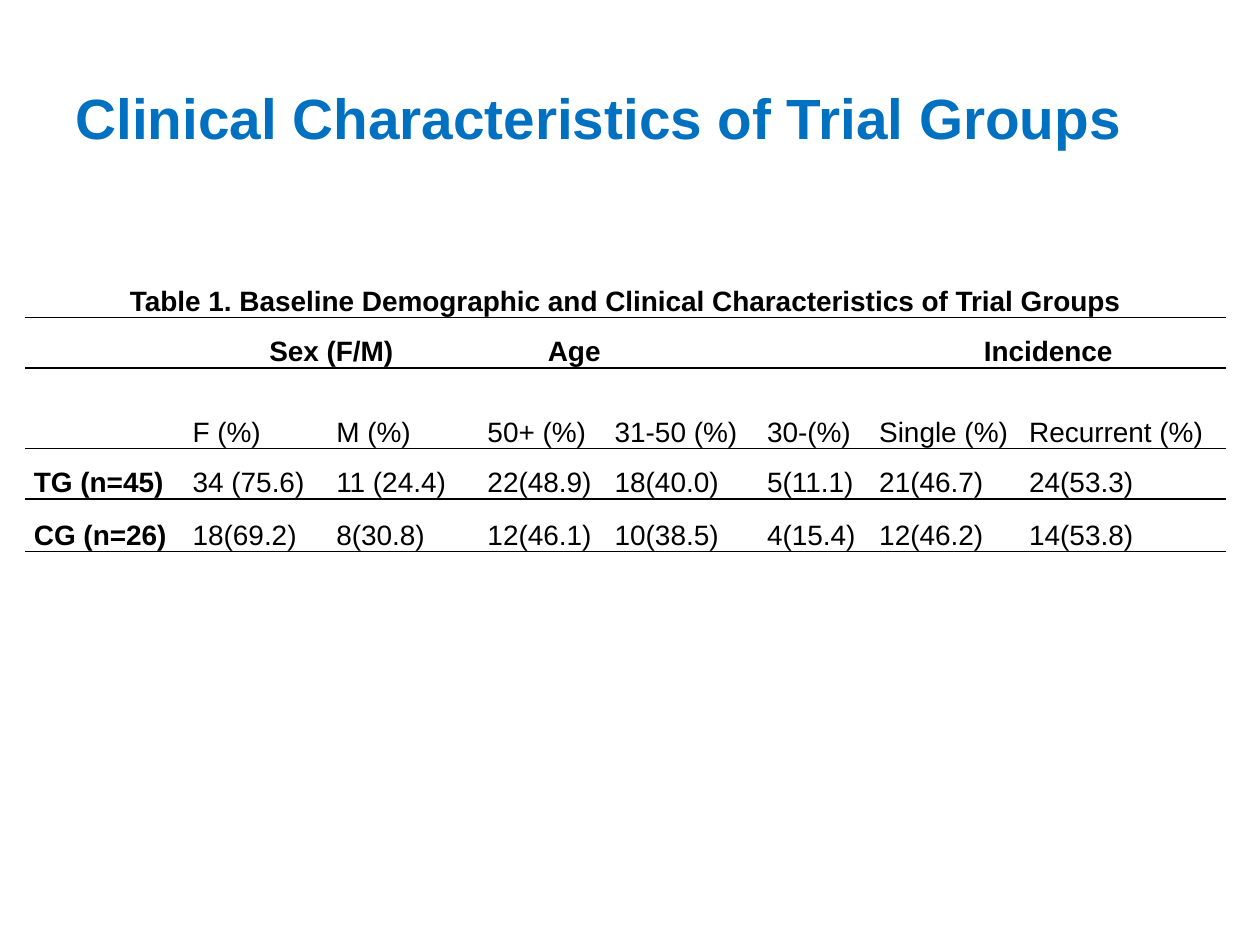
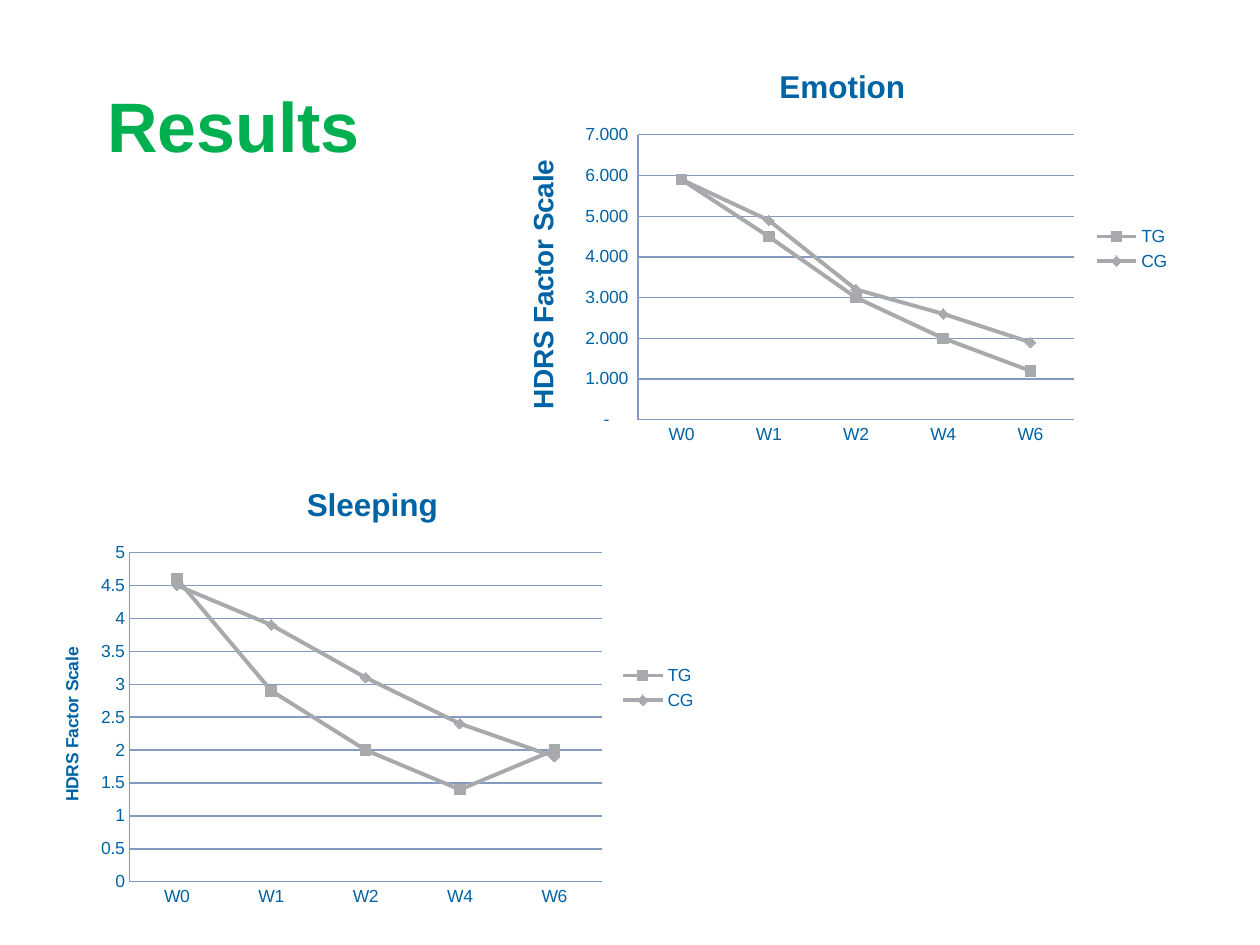
from dataclasses import dataclass

from lxml import etree
from pptx import Presentation
from pptx.chart.data import CategoryChartData
from pptx.dml.color import RGBColor
from pptx.enum.chart import XL_CHART_TYPE, XL_LEGEND_POSITION, XL_MARKER_STYLE, XL_TICK_MARK
from pptx.enum.text import MSO_ANCHOR, MSO_AUTO_SIZE, PP_ALIGN
from pptx.oxml import parse_xml
from pptx.oxml.ns import nsdecls, qn
from pptx.util import Pt

LINE_MARKERS = XL_CHART_TYPE.LINE_MARKERS
LEGEND_RIGHT = XL_LEGEND_POSITION.RIGHT
MARKERS = (XL_MARKER_STYLE.SQUARE, XL_MARKER_STYLE.DIAMOND)
NO_TICK = XL_TICK_MARK.NONE
MIDDLE = MSO_ANCHOR.MIDDLE
BOTTOM = MSO_ANCHOR.BOTTOM
LEFT = PP_ALIGN.LEFT
CENTER = PP_ALIGN.CENTER
NO_AUTOFIT = MSO_AUTO_SIZE.NONE
TITLE_ONLY = 5
PLAIN_TABLE = "{2D5ABB26-0587-4C30-8999-92F81FD0307C}"


@dataclass(frozen=True)
class Theme:
    font: str = "Arial"
    blue: RGBColor = RGBColor(0x00, 0x70, 0xC0)
    green: RGBColor = RGBColor(0x00, 0xB0, 0x50)
    black: RGBColor = RGBColor(0x00, 0x00, 0x00)
    chart_text: RGBColor = RGBColor(0x00, 0x63, 0xA4)
    grid: RGBColor = RGBColor(0x85, 0x9A, 0xC0)
    series: RGBColor = RGBColor(0xA7, 0xA9, 0xAC)
    title_size: float = 32.4
    results_size: float = 40
    table_size: float = 16
    chart_title_size: float = 18
    chart_size: float = 10


class Builder:
    def __init__(self, deck, theme):
        self.deck = deck
        self.theme = theme
        self.page = None

    def add_page(self):
        self.page = self.deck.slides.add_slide(self.deck.slide_layouts[TITLE_ONLY])

    def style(self, font, size, color, bold=False):
        font.name = self.theme.font
        font.size = Pt(size)
        font.color.rgb = color
        font.bold = bold

    def set_text(self, frame, text, size, color, bold=False, align=LEFT):
        frame.text = text
        para = frame.paragraphs[0]
        para.alignment = align
        for span in para.runs:
            self.style(span.font, size, color, bold)

    def title(self, text, bounds, size, color):
        box = self.page.shapes.title
        box.left, box.top, box.width, box.height = map(Pt, bounds)
        frame = box.text_frame
        frame.auto_size = NO_AUTOFIT
        frame.word_wrap = True
        frame.vertical_anchor = MIDDLE
        self.set_text(frame, text, size, color, bold=True)

    def table(self, left, top, widths, heights):
        frame = self.page.shapes.add_table(
            len(heights), len(widths), Pt(left), Pt(top), Pt(sum(widths)), Pt(sum(heights)))
        table = frame.table
        table.first_row = table.horz_banding = False
        next(table._tbl.iter(qn("a:tableStyleId"))).text = PLAIN_TABLE
        for column, width in zip(table.columns, widths):
            column.width = Pt(width)
        for row, height in zip(table.rows, heights):
            row.height = Pt(height)
        for cell in table.iter_cells():
            cell.margin_left = cell.margin_right = Pt(5)
            cell.margin_top = cell.margin_bottom = 0
            cell.vertical_anchor = BOTTOM
            cell.fill.background()
        return table

    def cell(self, cell, text, bold=False, align=LEFT):
        self.set_text(cell.text_frame, text, self.theme.table_size, self.theme.black, bold, align)

    def rule(self, table, row, side):
        for column in range(len(table.columns)):
            properties = table.cell(row, column)._tc.get_or_add_tcPr()
            line = parse_xml(f'<a:{side} {nsdecls("a")} w="{Pt(1)}"/>')
            fill = etree.SubElement(line, qn("a:solidFill"))
            etree.SubElement(fill, qn("a:srgbClr"), val=str(self.theme.black))
            properties.insert(0, line)

    def place_plot(self, chart, plot_box):
        area = chart._chartSpace.chart.plotArea
        for old in area.findall(qn("c:layout")):
            area.remove(old)
        layout = etree.Element(qn("c:layout"))
        manual = etree.SubElement(layout, qn("c:manualLayout"))
        settings = [("layoutTarget", "inner"), ("xMode", "edge"), ("yMode", "edge")]
        for name, value in settings + list(zip("xywh", plot_box)):
            etree.SubElement(manual, qn(f"c:{name}"), val=str(value))
        area.insert(0, layout)

    def line_chart(self, name, bounds, categories, values, maximum, step,
                   axis_size, number_format, plot_box):
        theme = self.theme
        data = CategoryChartData()
        data.categories = categories
        for group, scores in values.items():
            data.add_series(group, scores)
        chart = self.page.shapes.add_chart(LINE_MARKERS, *map(Pt, bounds), data).chart
        self.style(chart.font, theme.chart_size, theme.chart_text)
        chart.has_title = True
        self.set_text(chart.chart_title.text_frame, name,
                      theme.chart_title_size, theme.chart_text, True, CENTER)
        chart.chart_title.include_in_layout = False
        chart.has_legend = True
        chart.legend.position = LEGEND_RIGHT
        chart.legend.include_in_layout = False

        scale = chart.value_axis
        scale.minimum_scale, scale.maximum_scale, scale.major_unit = 0, maximum, step
        scale.tick_labels.number_format = number_format
        scale.tick_labels.number_format_is_linked = False
        scale.has_title = True
        self.set_text(scale.axis_title.text_frame, "HDRS Factor Scale",
                      axis_size, theme.chart_text, True, CENTER)
        scale.has_major_gridlines = True
        for axis in (scale, chart.category_axis):
            axis.major_tick_mark = axis.minor_tick_mark = NO_TICK
        for part in (scale, chart.category_axis, scale.major_gridlines):
            part.format.line.color.rgb = theme.grid
            part.format.line.width = Pt(0.75)

        plot = chart.plots[0]
        plot.vary_by_categories = False
        for series, marker in zip(plot.series, MARKERS):
            series.smooth = False
            series.format.line.color.rgb = theme.series
            series.format.line.width = Pt(2.25)
            series.marker.style = marker
            series.marker.size = 6
            series.marker.format.fill.solid()
            series.marker.format.fill.fore_color.rgb = theme.series
            series.marker.format.line.color.rgb = theme.series
        self.place_plot(chart, plot_box)


def build_characteristics(builder):
    theme = builder.theme
    builder.add_page()
    builder.title("Clinical Characteristics of Trial Groups", (36, 21.6, 648, 90),
                  theme.title_size, theme.blue)
    widths = (90.7, 82.1, 86.4, 72.7, 87.1, 64.1, 85.7, 117.4)
    table = builder.table(14.4, 151.2, widths, (30.2, 28.8, 46.1, 28.8, 30.2))
    headings = (
        (0, 0, 7, "Table 1. Baseline Demographic and Clinical Characteristics of Trial Groups", CENTER),
        (1, 1, 2, "Sex (F/M)", CENTER),
        (1, 3, 5, "Age", LEFT),
        (1, 6, 7, "Incidence", CENTER),
    )
    for row, first, last, text, align in headings:
        table.cell(row, first).merge(table.cell(row, last))
        builder.cell(table.cell(row, first), text, True, align)
    table.cell(1, 3).margin_left = Pt(39.5)
    rows = (
        ("", "F (%)", "M (%)", "50+ (%)", "31-50 (%)", "30-(%)", "Single (%)", "Recurrent (%)"),
        ("TG (n=45)", "34 (75.6)", "11 (24.4)", "22(48.9)", "18(40.0)", "5(11.1)", "21(46.7)", "24(53.3)"),
        ("CG (n=26)", "18(69.2)", "8(30.8)", "12(46.1)", "10(38.5)", "4(15.4)", "12(46.2)", "14(53.8)"),
    )
    for row, texts in enumerate(rows, 2):
        for column, text in enumerate(texts):
            builder.cell(table.cell(row, column), text, bold=column == 0)
    for row, side in ((1, "lnT"), (3, "lnT"), (4, "lnB")):
        builder.rule(table, row, side)


def build_results(builder):
    theme = builder.theme
    weeks = ("W0", "W1", "W2", "W4", "W6")
    builder.add_page()
    builder.title("Results", (54, 43.2, 160.6, 55.4), theme.results_size, theme.green)
    builder.line_chart(
        "Emotion", (286.6, 25.9, 389.5, 232.6), weeks,
        {"TG": (5.9, 4.5, 3, 2, 1.2), "CG": (5.9, 4.9, 3.2, 2.6, 1.9)},
        7, 1, 16, r'_-* #,##0.000_-;\-* #,##0.000_-;_-* "-"??_-', (0.2, 0.22, 0.64, 0.7))
    builder.line_chart(
        "Sleeping", (20.2, 264.2, 385.2, 257.8), weeks,
        {"TG": (4.6, 2.9, 2, 1.4, 2), "CG": (4.5, 3.9, 3.1, 2.4, 1.9)},
        5, 0.5, theme.chart_size, "General", (0.14, 0.2, 0.7, 0.73))


def main():
    deck = Presentation()
    deck.slide_width, deck.slide_height = Pt(720), Pt(540)
    builder = Builder(deck, Theme())
    build_characteristics(builder)
    build_results(builder)
    deck.save("out.pptx")


if __name__ == "__main__":
    main()
